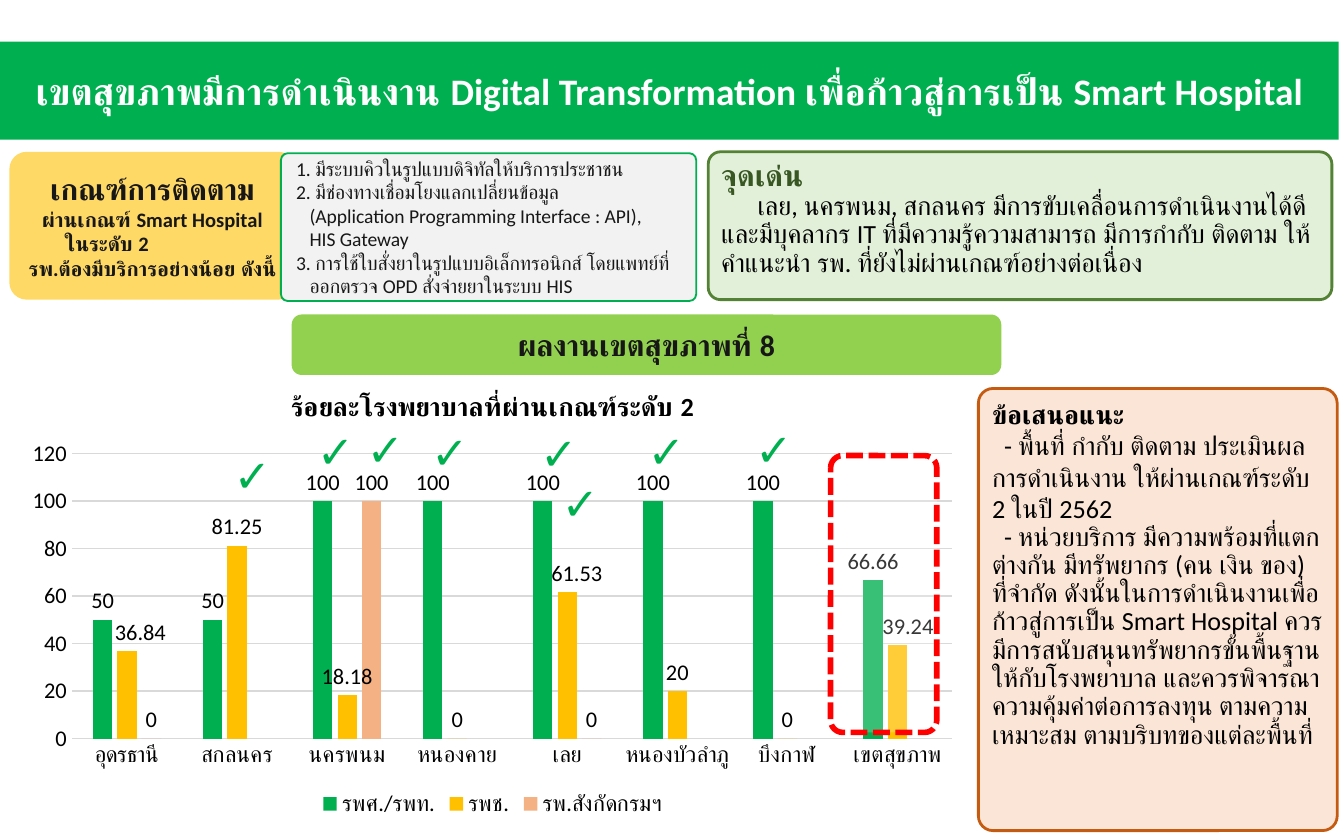
from dataclasses import dataclass

from lxml.etree import SubElement
from pptx import Presentation
from pptx.chart.data import CategoryChartData
from pptx.dml.color import RGBColor
from pptx.enum.chart import XL_CHART_TYPE as ChartType
from pptx.enum.chart import XL_LABEL_POSITION as LabelPos
from pptx.enum.chart import XL_LEGEND_POSITION as LegendPos
from pptx.enum.chart import XL_TICK_MARK as Tick
from pptx.enum.dml import MSO_LINE as Dash
from pptx.enum.shapes import MSO_SHAPE as Shape
from pptx.enum.text import MSO_ANCHOR as Anchor
from pptx.enum.text import PP_ALIGN as Align
from pptx.oxml import parse_xml
from pptx.oxml.ns import nsdecls, qn
from pptx.util import Inches, Pt

COLS, ROWS = 100, 62.5
CELL = Inches(0.1)


@dataclass(frozen=True)
class Theme:
    font: str = "Calibri"
    title: float = 20
    heading: float = 16
    body: float = 14
    chart: float = 12
    small: float = 11
    fine: float = 10.5
    check: float = 24
    ink: str = "181717"
    black: str = "000000"
    white: str = "FFFFFF"
    green: str = "00B050"
    lime: str = "92D050"
    gold: str = "FFD966"
    amber: str = "FFC000"
    salmon: str = "F4B183"
    red: str = "FF0000"
    pale_grey: str = "F2F2F2"
    grid: str = "D9D9D9"
    pale_green: str = "E2F0D9"
    mid_green: str = "548235"
    dark_green: str = "385723"
    pale_orange: str = "FBE5D6"
    orange: str = "C55A11"


T = Theme()

PROVINCES = ["อุดรธานี", "สกลนคร", "นครพนม", "หนองคาย", "เลย",
             "หนองบัวลำภู", "บึงกาฬ", "เขตสุขภาพ"]
RESULTS = [
    ("รพศ./รพท.", T.green, [50, 50, 100, 100, 100, 100, 100, 66.66]),
    ("รพช.", T.amber, [36.84, 81.25, 18.18, 0, 61.53, 20, 0, 39.24]),
    ("รพ.สังกัดกรมฯ", T.salmon, [0, None, 100, None, 0, None, None, None]),
]
# Labels of the second series moved right, as shares of the chart width
LABEL_SHIFTS = {0: 0.014, 4: 0.01, 7: 0.011}
CHECKS = [(16.4, 32.8), (22.6, 31), (26.3, 30.9), (31.1, 31.1),
          (39.2, 31.2), (47.2, 31), (55.2, 30.9), (40.8, 34.9)]
CRITERIA = [
    "1. มีระบบคิวในรูปแบบดิจิทัลให้บริการประชาชน",
    "2. มีช่องทางเชื่อมโยงแลกเปลี่ยนข้อมูล\n"
    "(Application Programming Interface : API),\nHIS Gateway",
    "3. การใช้ใบสั่งยาในรูปแบบอิเล็กทรอนิกส์ โดยแพทย์ที่\n"
    "ออกตรวจ OPD สั่งจ่ายยาในระบบ HIS",
]


def rgb(color):
    return RGBColor.from_string(color)


def cells(*values):
    """Turn grid columns and rows into lengths."""
    return [int(v * CELL) for v in values]


def add_text(tf, text, size=T.body, color=T.black, bold=False, align=Align.LEFT,
             margin=0, indent=0, spacing=None, before=0):
    """Add one paragraph; a newline is a line break, margin and indent are in cells."""
    p = tf.paragraphs[0]
    if p.runs:
        p = tf.add_paragraph()
    p.alignment, p.line_spacing, p.space_before = align, spacing, Pt(before)
    if margin or indent:
        p_pr = p._p.get_or_add_pPr()
        p_pr.set("marL", str(int(margin * CELL)))
        p_pr.set("indent", str(int(indent * CELL)))
    for i, line in enumerate(text.split("\n")):
        if i:
            p.add_line_break()
        r = p.add_run()
        r.text = line
        r.font.name, r.font.size, r.font.bold = T.font, Pt(size), bold
        r.font.color.rgb = rgb(color)


def add_panel(slide, at, fill, line=None, width=1, adj=0.167, anchor=Anchor.MIDDLE,
              inset=(1, 0.5)):
    sp = slide.shapes.add_shape(Shape.ROUNDED_RECTANGLE, *cells(*at))
    sp.adjustments[0] = adj
    sp.shadow.inherit = False
    sp.fill.solid()
    sp.fill.fore_color.rgb = rgb(fill)
    if line:
        sp.line.color.rgb = rgb(line)
        sp.line.width = Pt(width)
    else:
        sp.line.fill.background()
    tf = sp.text_frame
    tf.word_wrap, tf.vertical_anchor = True, anchor
    tf.margin_left, tf.margin_top = tf.margin_right, tf.margin_bottom = cells(*inset)
    return sp


def add_title(slide, text):
    sp = slide.shapes.title
    sp.left, sp.top, sp.width, sp.height = cells(0, 3.1, 99.6, 7.3)
    sp.fill.solid()
    sp.fill.fore_color.rgb = rgb(T.green)
    sp.text_frame.vertical_anchor = Anchor.MIDDLE
    add_text(sp.text_frame, text, size=T.title, color=T.white, bold=True, align=Align.CENTER)


def add_check(slide, col, row):
    tf = slide.shapes.add_textbox(*cells(col, row, 4.6, 5)).text_frame
    tf.word_wrap = False
    add_text(tf, "✓", size=T.check, color=T.green)


def shift_label(series, index, share):
    series.points[index].data_label.position = LabelPos.OUTSIDE_END
    idx = series._element.xpath(f"c:dLbls/c:dLbl/c:idx[@val='{index}']")[0]
    idx.addnext(parse_xml(
        f'<c:layout {nsdecls("c")}><c:manualLayout><c:x val="{share}"/>'
        '<c:y val="0"/></c:manualLayout></c:layout>'))


def add_results_chart(slide):
    data = CategoryChartData()
    data.categories = PROVINCES
    for name, _, values in RESULTS:
        data.add_series(name, values)
    chart = slide.shapes.add_chart(
        ChartType.COLUMN_CLUSTERED, *cells(1, 27.3, 71.3, 33.9), data).chart
    chart.font.name, chart.font.size = T.font, Pt(T.chart)
    chart.font.color.rgb = rgb(T.black)
    chart.has_title = True
    add_text(chart.chart_title.text_frame, "ร้อยละโรงพยาบาลที่ผ่านเกณฑ์ระดับ 2",
             bold=True, align=Align.CENTER)
    chart.chart_title.include_in_layout = False
    chart.has_legend = True
    chart.legend.position, chart.legend.include_in_layout = LegendPos.BOTTOM, False

    cat, val = chart.category_axis, chart.value_axis
    cat.major_tick_mark = val.major_tick_mark = Tick.NONE
    val.minimum_scale, val.maximum_scale, val.major_unit = 0, 120, 20
    val.format.line.fill.background()
    for line in (cat.format.line, val.major_gridlines.format.line):
        line.color.rgb = rgb(T.grid)
        line.width = Pt(0.75)

    plot = chart.plots[0]
    plot.gap_width, plot.overlap, plot.vary_by_categories = 219, -27, False
    for series, (_, color, _) in zip(plot.series, RESULTS):
        series.format.fill.solid()
        series.format.fill.fore_color.rgb = rgb(color)
        series.data_labels.show_value = True
        series.data_labels.position = LabelPos.OUTSIDE_END
    for index, share in LABEL_SHIFTS.items():
        shift_label(plot.series[1], index, share)


def add_region_frame(slide):
    sp = add_panel(slide, (61.8, 33.9, 7.9, 20.6), T.white, T.red, 3, 0.115)
    sp.line.dash_style = Dash.SQUARE_DOT
    color = sp._element.spPr.find(qn("a:solidFill"))[0]
    SubElement(color, qn("a:alpha")).set("val", "22000")


def add_criteria(slide):
    tf = add_panel(slide, (0.7, 11.3, 21.3, 11), T.gold, adj=0.117).text_frame
    add_text(tf, "เกณฑ์การติดตาม", size=T.heading, color=T.ink, bold=True, align=Align.CENTER)
    for text, align, margin in (("ผ่านเกณฑ์ Smart Hospital", Align.CENTER, 0),
                                ("ในระดับ 2", Align.LEFT, 2.8),
                                ("รพ.ต้องมีบริการอย่างน้อย ดังนี้", Align.CENTER, 0)):
        add_text(tf, text, size=T.small, color=T.ink, bold=True, align=align, margin=margin)
    tf = add_panel(slide, (20.9, 11.4, 30.9, 11), T.pale_grey, T.green, adj=0.047).text_frame
    for item in CRITERIA:
        add_text(tf, item, size=T.fine, color=T.ink, margin=1, indent=-1)


def add_comments(slide):
    style = dict(width=1.5, anchor=Anchor.TOP, inset=(0.7, 0.4))
    tf = add_panel(slide, (52.7, 11.3, 46.4, 11), T.pale_green, T.mid_green,
                   adj=0.083, **style).text_frame
    add_text(tf, "จุดเด่น", size=T.heading, color=T.dark_green, bold=True, spacing=0.9)
    add_text(tf, "เลย, นครพนม, สกลนคร มีการขับเคลื่อนการดำเนินงานได้ดีและมีบุคลากร IT "
             "ที่มีความรู้ความสามารถ มีการกำกับ ติดตาม ให้คำแนะนำ รพ. "
             "ที่ยังไม่ผ่านเกณฑ์อย่างต่อเนื่อง", indent=2.7, spacing=0.9)
    tf = add_panel(slide, (72.8, 28.9, 26.7, 32.9), T.pale_orange, T.orange,
                   adj=0.041, **style).text_frame
    add_text(tf, "ข้อเสนอแนะ", bold=True)
    add_text(tf, "- พื้นที่ กำกับ ติดตาม ประเมินผลการดำเนินงาน ให้ผ่านเกณฑ์ระดับ 2 ในปี 2562",
             indent=0.9)
    add_text(tf, "- หน่วยบริการ มีความพร้อมที่แตกต่างกัน มีทรัพยากร (คน เงิน ของ) ที่จำกัด "
             "ดังนั้นในการดำเนินงานเพื่อก้าวสู่การเป็น Smart Hospital "
             "ควรมีการสนับสนุนทรัพยากรขั้นพื้นฐานให้กับโรงพยาบาล "
             "และควรพิจารณาความคุ้มค่าต่อการลงทุน ตามความเหมาะสม ตามบริบทของแต่ละพื้นที่",
             indent=0.9, spacing=0.9)


def main():
    prs = Presentation()
    prs.slide_width, prs.slide_height = cells(COLS, ROWS)
    slide = prs.slides.add_slide(prs.slide_layouts[5])
    add_title(slide, "เขตสุขภาพมีการดำเนินงาน Digital Transformation "
                     "เพื่อก้าวสู่การเป็น Smart Hospital")
    banner = add_panel(slide, (21.7, 23.4, 52.8, 4.5), T.lime)
    add_text(banner.text_frame, "ผลงานเขตสุขภาพที่ 8", size=T.heading, color=T.ink,
             bold=True, align=Align.CENTER)
    add_results_chart(slide)
    add_region_frame(slide)
    add_criteria(slide)
    for col, row in CHECKS:
        add_check(slide, col, row)
    add_comments(slide)
    prs.save("out.pptx")


if __name__ == "__main__":
    main()
